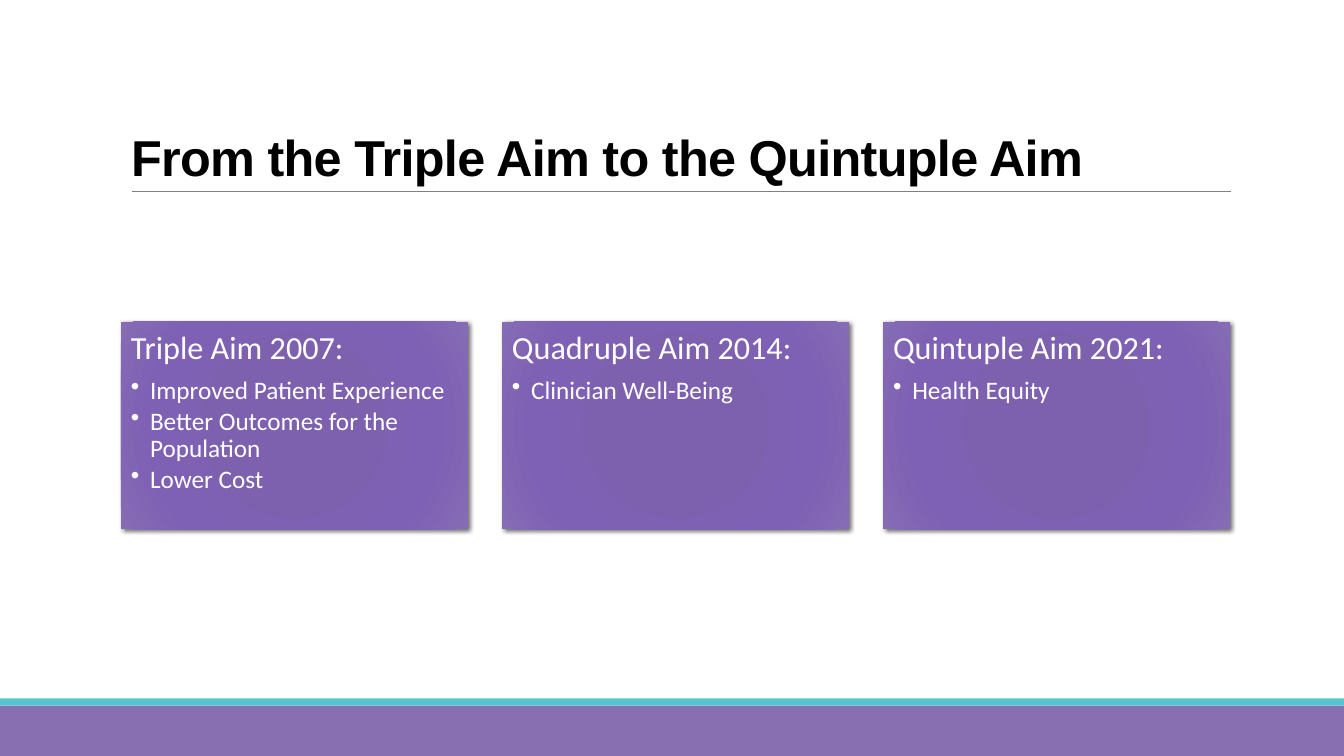
import pptx
import pptx.util
import pptx.oxml
import pptx.oxml.ns
import pptx.dml.color
import pptx.enum.shapes
import pptx.enum.text

Inches = pptx.util.Inches
Pt = pptx.util.Pt
RGBColor = pptx.dml.color.RGBColor

PURPLE = RGBColor(0x87, 0x6F, 0xB2)
TEAL = RGBColor(0x56, 0xC5, 0xD0)
GRAY = RGBColor(0x80, 0x80, 0x80)
BLACK = RGBColor(0, 0, 0)
WHITE = RGBColor(0xFF, 0xFF, 0xFF)
CARD_STOPS = [
    (0, RGBColor(0x7B, 0x5E, 0xAF)),
    (34, RGBColor(0x7D, 0x61, 0xAF)),
    (70, RGBColor(0x7E, 0x60, 0xB4)),
    (100, RGBColor(0x86, 0x6C, 0xB5)),
]
NAMESPACE = pptx.oxml.ns.nsdecls("a")

AIMS = [
    ("Triple Aim 2007:", ["Improved Patient Experience", "Better Outcomes for the Population", "Lower Cost"]),
    ("Quadruple Aim 2014:", ["Clinician Well-Being"]),
    ("Quintuple Aim 2021:", ["Health Equity"]),
]


def add_rectangle(page, left, top, width, height):
    box = page.shapes.add_shape(
        pptx.enum.shapes.MSO_SHAPE.RECTANGLE,
        Inches(left), Inches(top), Inches(width), Inches(height))
    box.shadow.inherit = False
    box.line.fill.background()
    return box


def add_span(para, text, font_name, size, color):
    span = para.add_run()
    span.text = text
    span.font.name = font_name
    span.font.size = Pt(size)
    span.font.color.rgb = color
    return span


deck = pptx.Presentation()
deck.slide_width = Inches(13.33)
deck.slide_height = Inches(7.5)
page = deck.slides.add_slide(deck.slide_layouts[5])

for top, height, color in [(7, 0.5, PURPLE), (6.93, 0.07, TEAL)]:
    band = add_rectangle(page, 0, top, 13.33, height)
    band.fill.solid()
    band.fill.fore_color.rgb = color

rule = page.shapes.add_connector(
    pptx.enum.shapes.MSO_CONNECTOR.STRAIGHT,
    Inches(1.31), Inches(1.9), Inches(12.21), Inches(1.9))
rule.line.color.rgb = GRAY
rule.line.width = Pt(0.5)
rule._element.spPr.append(pptx.oxml.parse_xml(f"<a:effectLst {NAMESPACE}/>"))

title = page.shapes.title
title.left, title.top = Inches(1.2), Inches(0.31)
title.width, title.height = Inches(11), Inches(1.59)
title.text_frame.word_wrap = True
title.text_frame.auto_size = pptx.enum.text.MSO_AUTO_SIZE.NONE
title.text_frame.vertical_anchor = pptx.enum.text.MSO_ANCHOR.BOTTOM
para = title.text_frame.paragraphs[0]
para.alignment = pptx.enum.text.PP_ALIGN.LEFT
para.line_spacing = 0.85
span = add_span(para, "From the Triple Aim to the Quintuple Aim", "Arial", 36, BLACK)
span.font.bold = True
span.font._element.set("spc", "-50")

stops = "".join(
    f'<a:gs pos="{position * 1000}"><a:srgbClr val="{color}"/></a:gs>'
    for position, color in CARD_STOPS)

for column, (heading, goals) in enumerate(AIMS):
    card = add_rectangle(page, 1.2 + 3.78 * column, 3.19, 3.44, 2.06)
    properties = card._element.spPr
    properties.insert(2, pptx.oxml.parse_xml(
        f'<a:gradFill {NAMESPACE} rotWithShape="1"><a:gsLst>{stops}</a:gsLst>'
        '<a:path path="circle"><a:fillToRect l="100000" t="100000" r="100000" b="100000"/>'
        '</a:path></a:gradFill>'))
    properties.find(pptx.oxml.ns.qn("a:effectLst")).append(pptx.oxml.parse_xml(
        f'<a:outerShdw {NAMESPACE} blurRad="44450" dist="25400" dir="2700000" rotWithShape="0">'
        '<a:srgbClr val="000000"><a:alpha val="60000"/></a:srgbClr></a:outerShdw>'))

    frame = card.text_frame
    frame.word_wrap = True
    frame.vertical_anchor = pptx.enum.text.MSO_ANCHOR.TOP
    frame.margin_left = frame.margin_right = Inches(0.1)
    frame.margin_top = frame.margin_bottom = Inches(0.1)
    para = frame.paragraphs[0]
    para.alignment = pptx.enum.text.PP_ALIGN.LEFT
    para.line_spacing = 0.9
    para.space_after = Pt(8)
    add_span(para, heading, "Calibri", 23, WHITE)

    for goal in goals:
        para = frame.add_paragraph()
        para.level = 1
        para.alignment = pptx.enum.text.PP_ALIGN.LEFT
        para.line_spacing = 0.9
        para.space_after = Pt(2.7)
        indent = para._p.get_or_add_pPr()
        indent.set("marL", str(Inches(0.19)))
        indent.set("indent", str(Inches(-0.19)))
        indent.append(pptx.oxml.parse_xml(f'<a:buChar {NAMESPACE} char="•"/>'))
        add_span(para, goal, "Calibri", 18, WHITE)

deck.save("out.pptx")
